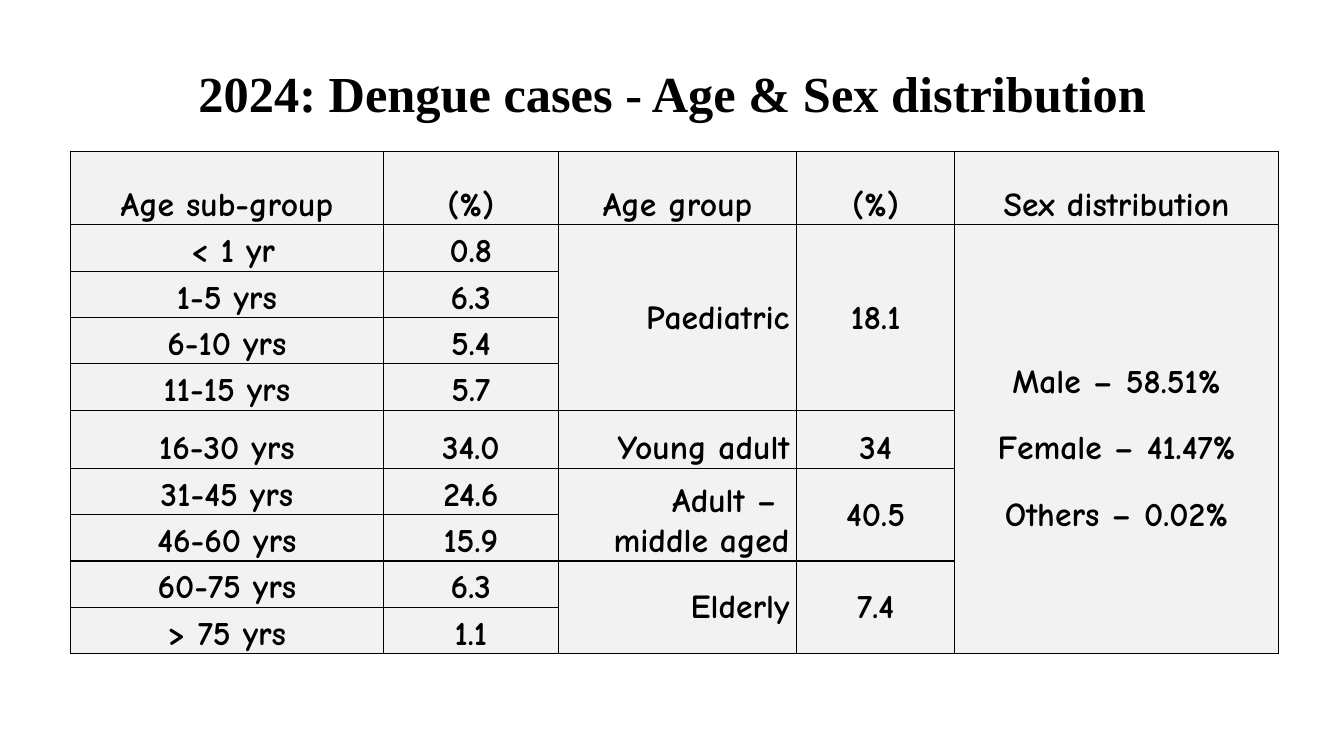
from dataclasses import dataclass

from lxml.etree import SubElement
from pptx import Presentation
from pptx.dml.color import RGBColor
from pptx.enum.text import MSO_ANCHOR, PP_ALIGN
from pptx.oxml.ns import qn
from pptx.util import Inches, Pt


@dataclass(frozen=True)
class Theme:
    ink: str = "000000"
    cell_fill: str = "F2F2F2"
    title_font: str = "Times New Roman"
    table_font: str = "Comic Neue"
    title_size: int = 36
    table_size: int = 24
    border_width: int = 1
    tight: float = 1.04
    loose: float = 1.5


THEME = Theme()
COLUMN_WIDTHS = [3.1, 1.74, 2.36, 1.57, 3.21]
HEADER_HEIGHT, ROW_HEIGHT = 0.73, 0.46
HEADERS = ["Age sub-group", "(%)", "Age group", "(%)", "Sex distribution"]
SUB_GROUPS = [
    (" < 1 yr", "0.8"),
    ("1-5 yrs", "6.3"),
    ("6-10 yrs", "5.4"),
    ("11-15 yrs", "5.7"),
    ("16-30 yrs", "34.0"),
    ("31-45 yrs", "24.6"),
    ("46-60 yrs", "15.9"),
    ("60-75 yrs", "6.3"),
    ("> 75 yrs", "1.1"),
]
# Label lines, share, rows covered, label format, share anchor
AGE_GROUPS = [
    (["Paediatric"], "18.1", 4, {"anchor": MSO_ANCHOR.MIDDLE}, MSO_ANCHOR.MIDDLE),
    (["Young adult"], "34", 1, {"line_spacing": THEME.loose}, MSO_ANCHOR.BOTTOM),
    (["Adult – ", "middle aged"], "40.5", 2, {}, MSO_ANCHOR.MIDDLE),
    (["Elderly"], "7.4", 2, {"anchor": MSO_ANCHOR.MIDDLE}, MSO_ANCHOR.MIDDLE),
]
SEXES = ["Male – 58.51%", "Female – 41.47%", "Others – 0.02%"]


def write_text(text_frame, lines, *, font=THEME.table_font, size=THEME.table_size,
               align=PP_ALIGN.CENTER, line_spacing=THEME.tight, space_after=0):
    for index, line in enumerate(lines):
        paragraph = text_frame.add_paragraph() if index else text_frame.paragraphs[0]
        paragraph.alignment = align
        paragraph.line_spacing = line_spacing
        paragraph.space_after = Pt(space_after)
        run = paragraph.add_run()
        run.text = line
        run.font.name = font
        run.font.size = Pt(size)
        run.font.bold = True
        run.font.color.rgb = RGBColor.from_string(THEME.ink)


def add_title(slide, text):
    title = slide.shapes.title
    title.left, title.top = Inches(0.92), Inches(0.4)
    title.width, title.height = Inches(11.5), Inches(1.1)
    title.text_frame.vertical_anchor = MSO_ANCHOR.MIDDLE
    write_text(title.text_frame, [text], font=THEME.title_font,
               size=THEME.title_size, line_spacing=0.9)


def style_cell(cell):
    properties = cell._tc.get_or_add_tcPr()
    for side in ("a:lnL", "a:lnR", "a:lnT", "a:lnB"):
        line = SubElement(properties, qn(side), w=str(Pt(THEME.border_width)))
        SubElement(SubElement(line, qn("a:solidFill")), qn("a:srgbClr"), val=THEME.ink)
    cell.fill.solid()
    cell.fill.fore_color.rgb = RGBColor.from_string(THEME.cell_fill)
    cell.margin_left = cell.margin_right = Inches(0.07)
    cell.margin_top = cell.margin_bottom = 0


def fill_cell(table, row, column, lines, *, rows=1, anchor=MSO_ANCHOR.BOTTOM, **text_format):
    """Write lines into a cell that covers the given number of rows."""
    cell = table.cell(row, column)
    if rows > 1:
        cell.merge(table.cell(row + rows - 1, column))
    cell.vertical_anchor = anchor
    write_text(cell.text_frame, lines, **text_format)


def add_grid(slide):
    row_count = len(SUB_GROUPS) + 1
    height = HEADER_HEIGHT + ROW_HEIGHT * len(SUB_GROUPS)
    table = slide.shapes.add_table(
        row_count, len(COLUMN_WIDTHS), Inches(0.7), Inches(1.5),
        Inches(sum(COLUMN_WIDTHS)), Inches(height)).table
    table.first_row = table.horz_banding = False
    for column, width in zip(table.columns, COLUMN_WIDTHS):
        column.width = Inches(width)
    for index, row in enumerate(table.rows):
        row.height = Inches(ROW_HEIGHT if index else HEADER_HEIGHT)
    for cell in table.iter_cells():
        style_cell(cell)
    return table


def fill_distribution(table):
    for column, header in enumerate(HEADERS):
        fill_cell(table, 0, column, [header], line_spacing=THEME.loose)
    for row, values in enumerate(SUB_GROUPS, start=1):
        for column, value in enumerate(values):
            fill_cell(table, row, column, [value])
    row = 1
    for label, share, rows, label_format, share_anchor in AGE_GROUPS:
        fill_cell(table, row, 2, label, rows=rows, align=PP_ALIGN.RIGHT, **label_format)
        fill_cell(table, row, 3, [share], rows=rows, anchor=share_anchor)
        row += rows
    fill_cell(table, 1, 4, SEXES, rows=len(SUB_GROUPS), anchor=MSO_ANCHOR.MIDDLE,
              line_spacing=THEME.loose, space_after=6)


def main():
    presentation = Presentation()
    presentation.slide_width, presentation.slide_height = Inches(13.33), Inches(7.5)
    slide = presentation.slides.add_slide(presentation.slide_layouts.get_by_name("Title Only"))
    add_title(slide, "2024: Dengue cases - Age & Sex distribution")
    fill_distribution(add_grid(slide))
    presentation.save("out.pptx")


if __name__ == "__main__":
    main()
